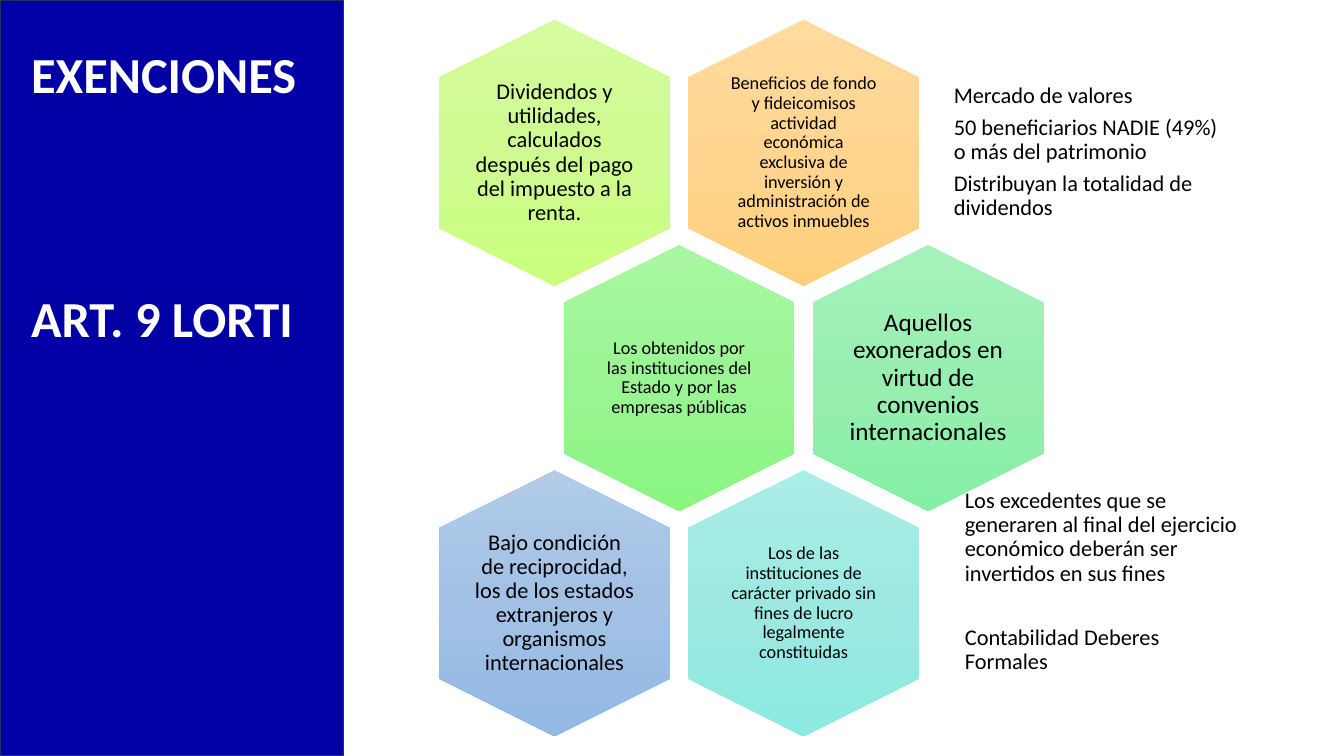
from copy import deepcopy

from pptx import Presentation
from pptx.dml.color import RGBColor
from pptx.enum.shapes import MSO_SHAPE
from pptx.enum.text import MSO_ANCHOR, PP_ALIGN
from pptx.util import Inches, Pt

HEXAGON_WIDTH, HEXAGON_HEIGHT = 2.64, 2.29
COLUMN_STEP, ROW_STEP = 2.47, 2.235
EXEMPTIONS = [
    (0, 0, "Dividendos y utilidades, calculados después del pago del impuesto a la renta.",
     16, 0, ("D5FC9F", "CEFA91", "CAFF7D")),
    (0, 1, "Beneficios de fondo y fideicomisos actividad económica exclusiva de "
           "inversión y administración de activos inmuebles",
     13, 0.05, ("FFDB9E", "FFD590", "FFD07C")),
    (1, 0.5, "Los obtenidos por las instituciones del Estado y por las empresas públicas",
     13, 0.05, ("A9F7A2", "9BF494", "89F780")),
    (1, 1.5, "Aquellos exonerados en virtud de convenios internacionales",
     18, 0, ("A6F2BC", "98EEB0", "84F0A4")),
    (2, 0, "Bajo condición de reciprocidad, los de los estados extranjeros y "
           "organismos internacionales",
     16, 0, ("B1CBE9", "A3C1E5", "93B9E4")),
    (2, 1, "Los de las instituciones de carácter privado sin fines de lucro "
           "legalmente constituidas",
     13, 0.05, ("ABEDE7", "9DE9E2", "8BEAE2")),
]
FUND_CONDITIONS = [
    "Mercado de valores",
    "50 beneficiarios NADIE (49%) o más del patrimonio",
    "Distribuyan la totalidad de dividendos",
]
NONPROFIT_CONDITIONS = [
    "Los excedentes que se generaren al final del ejercicio económico "
    "deberán ser invertidos en sus fines",
    "Contabilidad Deberes Formales",
]


def color(value):
    """Return the colour for a hex string."""
    return RGBColor.from_string(value)


def add_text(slide, paragraphs, left, top, width, height, *, size, hue="000000",
             bold=False, align=PP_ALIGN.LEFT, anchor=MSO_ANCHOR.MIDDLE,
             insets=(0.07, 0.07, 0.07, 0.07), line_spacing=0.9, gap=0):
    """Add a text box, with gap points before each later paragraph."""
    box = slide.shapes.add_textbox(Inches(left), Inches(top), Inches(width), Inches(height))
    frame = box.text_frame
    frame.word_wrap = True
    frame.vertical_anchor = anchor
    frame.margin_left, frame.margin_top, frame.margin_right, frame.margin_bottom = map(
        Inches, insets)
    for index, text in enumerate(paragraphs):
        paragraph = frame.paragraphs[0] if index == 0 else frame.add_paragraph()
        paragraph.alignment = align
        paragraph.line_spacing = line_spacing
        if index:
            paragraph.space_before = Pt(gap)
        run = paragraph.add_run()
        run.text = text
        run.font.name = "Calibri"
        run.font.size = Pt(size)
        run.font.bold = bold
        run.font.color.rgb = color(hue)


def fill_gradient(shape, hues):
    """Fill a shape from top to bottom with three evenly spaced colours."""
    shape.fill.gradient()
    shape.fill.gradient_angle = 270
    gradient = shape.fill._xPr.gradFill
    gradient.set("rotWithShape", "0")
    stop_list = gradient.gsLst
    stop_list.append(deepcopy(stop_list[-1]))
    for index, (stop, hue) in enumerate(zip(shape.fill.gradient_stops, hues)):
        stop.position = index / 2
        stop.color.rgb = color(hue)


def add_exemption(slide, row, column, text, size, inset, hues):
    """Add one upright hexagon of the honeycomb with its text."""
    left = 4.18 + column * COLUMN_STEP
    top = 0.37 + row * ROW_STEP
    hexagon = slide.shapes.add_shape(
        MSO_SHAPE.HEXAGON, Inches(left), Inches(top),
        Inches(HEXAGON_WIDTH), Inches(HEXAGON_HEIGHT))
    hexagon.adjustments[0] = 0.25
    hexagon.adjustments[1] = 1.1547
    hexagon.rotation = 90
    hexagon.shadow.inherit = False
    hexagon.line.fill.background()
    fill_gradient(hexagon, hues)
    add_text(slide, [text], left + 0.53, top + 0.24, 1.58, 1.81, size=size,
             align=PP_ALIGN.CENTER, insets=(inset,) * 4)


def add_side_panel(slide):
    """Add the blue panel with the slide title."""
    panel = slide.shapes.add_shape(
        MSO_SHAPE.RECTANGLE, Inches(0), Inches(0), Inches(3.41), Inches(7.5))
    panel.shadow.inherit = False
    panel.fill.solid()
    panel.fill.fore_color.rgb = color("0000A4")
    panel.line.color.rgb = color("1E3256")
    panel.line.width = Pt(1)
    add_text(slide, ["EXENCIONES", "ART. 9 LORTI"], 0.21, 0.38, 3, 3.13, size=36,
             hue="FFFFFF", bold=True, anchor=MSO_ANCHOR.TOP,
             insets=(0.1, 0.05, 0.1, 0.05), line_spacing=1, gap=131)


def main():
    """Build the slide and save it."""
    presentation = Presentation()
    presentation.slide_width = Inches(13.33)
    presentation.slide_height = Inches(7.5)
    slide = presentation.slides.add_slide(presentation.slide_layouts[6])
    for exemption in EXEMPTIONS:
        add_exemption(slide, *exemption)
    add_text(slide, FUND_CONDITIONS, 9.39, 0.72, 2.94, 1.58, size=16, gap=5.6,
             insets=(0.07, 0.07, 0.2, 0.07))
    add_text(slide, NONPROFIT_CONDITIONS, 9.5, 5.12, 2.94, 1.58, size=16, gap=28.4,
             insets=(0.07, 0.07, 0.07, 0.35))
    add_side_panel(slide)
    presentation.save("out.pptx")


if __name__ == "__main__":
    main()
